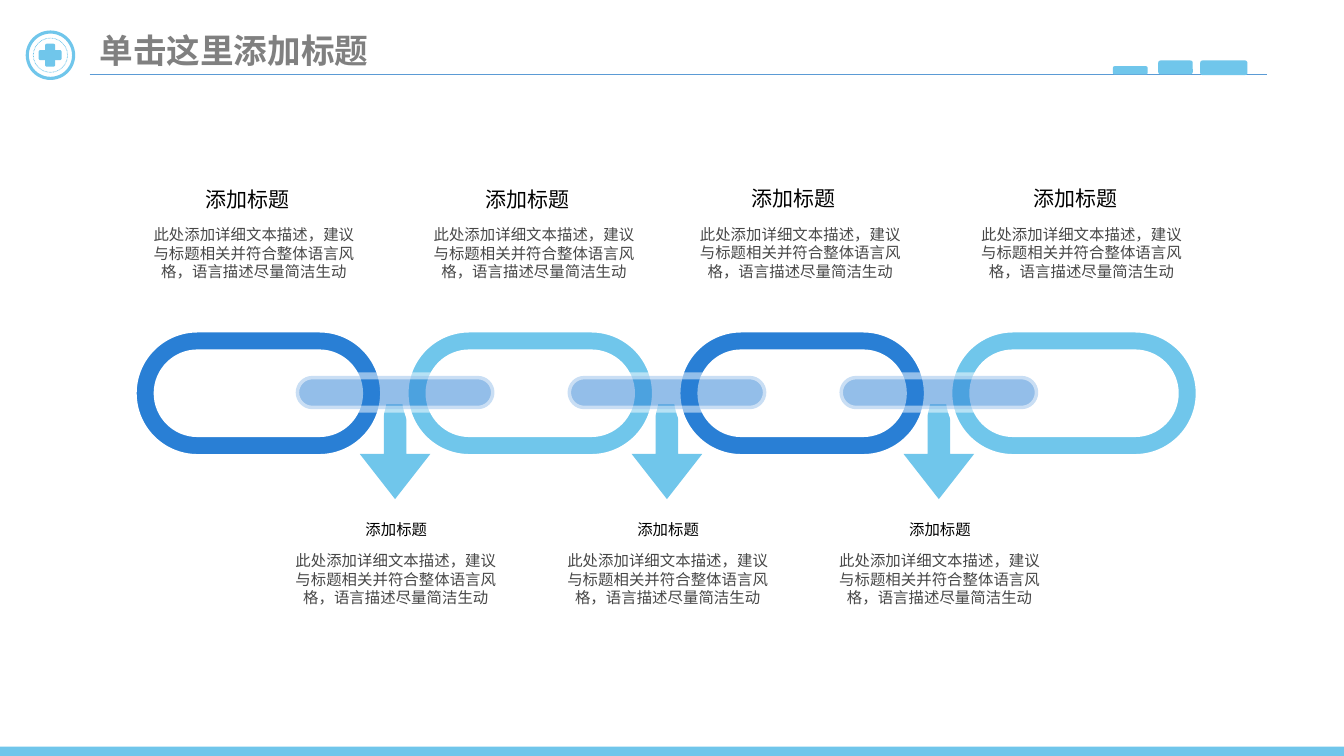
"""Builds a chain diagram slide with four links, three joints and captions."""
from lxml import etree
from pptx import Presentation
from pptx import util as u
from pptx.dml.color import RGBColor
from pptx.enum import dml, shapes, text
from pptx.oxml.ns import qn

COLORS = {"sky": "70C6EB", "blue": "297FD5", "rule": "5B9BD5", "white": "FFFFFF",
          "title": "808080", "body": "474747", "black": "000000"}
FONT = "Noto Sans CJK SC"
HEADING = "添加标题"
BODY = "此处添加详细文本描述，建议与标题相关并符合整体语言风格，语言描述尽量简洁生动"
PITCH = 194.2
BEZIER = 0.5523
MSO = shapes.MSO_SHAPE


def paint(sp, fill=None, line=None, width=0, alpha=None):
    """Set fill, outline and opacity of a shape."""
    sp.shadow.inherit = False
    for part, color in ((sp.fill, fill), (sp.line.fill, line)):
        if color is None:
            part.background()
        else:
            part.solid()
            part.fore_color.rgb = RGBColor.from_string(COLORS[color])
    if line:
        sp.line.width = u.Pt(width)
    if alpha:
        for clr in sp._element.spPr.iter(qn("a:srgbClr")):
            etree.SubElement(clr, qn("a:alpha"), val=str(alpha * 1000))
    return sp


def label(box, words, size, color, bold=False, inset=0):
    """Add a centred, wrapping text box without side margins."""
    sp = s.shapes.add_textbox(*map(u.Pt, box))
    tf = sp.text_frame
    tf.word_wrap = True
    tf.margin_left = tf.margin_right = 0
    tf.margin_top = tf.margin_bottom = u.Pt(inset)
    tf.text = words
    p = tf.paragraphs[0]
    p.alignment = text.PP_ALIGN.CENTER
    r = p.runs[0]
    r.font.size = u.Pt(size)
    r.font.bold = bold
    r.font.color.rgb = RGBColor.from_string(COLORS[color])
    r.font.name = FONT
    etree.SubElement(r._r.get_or_add_rPr(), qn("a:ea"), typeface=FONT)
    return tf


prs = Presentation()
prs.slide_width, prs.slide_height = u.Pt(960), u.Pt(540)
s = prs.slides.add_slide(prs.slide_layouts[6])

tf = label((64.1, 18, 208, 36), "单击这里添加标题", 24, "title", bold=True, inset=3.6)
tf.margin_left = tf.margin_right = u.Pt(7.2)
tf.word_wrap = False
tf.auto_size = text.MSO_AUTO_SIZE.SHAPE_TO_FIT_TEXT
tf.paragraphs[0].alignment = text.PP_ALIGN.LEFT

icon = s.shapes.add_group_shape()
for left, size, width in ((19.5, 33.1, 2.25), (23.8, 24.5, 0.5)):
    ring = icon.shapes.add_shape(MSO.OVAL, *map(u.Pt, (left, left + 3.4, size, size)))
    paint(ring, line="sky", width=width)
ring.line.dash_style = dml.MSO_LINE.ROUND_DOT
for angle in (90, 0):
    arm = icon.shapes.add_shape(MSO.ROUNDED_RECTANGLE, *map(u.Pt, (27.6, 35.8, 16.4, 7.2)))
    arm.rotation = angle
    paint(arm, "sky")

rule = s.shapes.add_connector(shapes.MSO_CONNECTOR.STRAIGHT, *map(u.Pt, (64.1, 53.2, 905, 53.2)))
rule.line.color.rgb = RGBColor.from_string(COLORS["rule"])
rule.line.width = u.Pt(0.5)
etree.SubElement(rule._element.spPr, qn("a:effectLst"))

for left, top, width, height in ((795, 47.3, 24.7, 5.8), (827.3, 43.2, 24.7, 9.9),
                                 (857.3, 43.2, 33.8, 10.5)):
    tab = s.shapes.add_shape(MSO.ROUNDED_RECTANGLE, *map(u.Pt, (left, top, width, height)))
    paint(tab, "sky")
footer = s.shapes.add_shape(MSO.RECTANGLE, *map(u.Pt, (0, 533.3, 960, 6.9)))
paint(footer, "sky")

for i in (2, 1, 0):
    arrow = s.shapes.add_shape(MSO.RIGHT_ARROW, *map(u.Pt, (248.4 + i * PITCH, 297.5, 67.6, 50.4)))
    arrow.rotation = 90
    arrow.adjustments[0], arrow.adjustments[1] = 0.32, 0.64
    paint(arrow, "sky")

links = [(141.1 + i * PITCH, 87, 280.9, (28.8, 45.9), ("blue", "sky")[i % 2], None) for i in range(4)]
joints = [(223.1 + i * PITCH, 118.2, 280.4, (11.9,), "blue", 50) for i in range(3)]
for x, straight, y, radii, color, alpha in links + joints:
    fb = s.shapes.build_freeform()
    for radius in radii:
        k = radius * BEZIER
        end = x + straight
        points = [(x, y - radius), (end, y - radius),
                  (end + k, y - radius), (end + radius, y - k), (end + radius, y),
                  (end + radius, y + k), (end + k, y + radius), (end, y + radius),
                  (x, y + radius),
                  (x - k, y + radius), (x - radius, y + k), (x - radius, y),
                  (x - radius, y - k), (x - k, y - radius), (x, y - radius)]
        points = [(u.Pt(px), u.Pt(py)) for px, py in points]
        if radius == radii[0]:
            fb = s.shapes.build_freeform(*points[0])
        else:
            fb.move_to(*points[0])
        fb.add_line_segments(points[1:])
    sp = fb.convert_to_shape()
    segments = list(sp._element.spPr.iter(qn("a:lnTo")))
    for contour in range(0, len(segments), 14):
        for first in (1, 4, 8, 11):
            trio = segments[contour + first:contour + first + 3]
            curve = etree.Element(qn("a:cubicBezTo"))
            trio[0].addprevious(curve)
            for segment in trio:
                curve.append(segment[0])
                segment.getparent().remove(segment)
    paint(sp, color, "white", 5, alpha)

for left, top in ((104.4, 161.1), (304.5, 161.1), (494.7, 160.6), (695.6, 160.6)):
    label((left, top, 154, 40.3), BODY, 11, "body")
    tf = label((left - 9.8, top - 30.1, 164.2, 24.5), HEADING, 15, "black", inset=3.6)
    tf.vertical_anchor = text.MSO_ANCHOR.MIDDLE
    tf.paragraphs[0].line_spacing = 0.9
    tf.paragraphs[0].space_before = u.Pt(10)

for i in range(3):
    label((221.6 + i * PITCH, 371.5, 123, 13.7), HEADING, 11, "black")
    label((205.8 + i * PITCH, 393.8, 154, 40.3), BODY, 11, "body")

prs.save("out.pptx")
